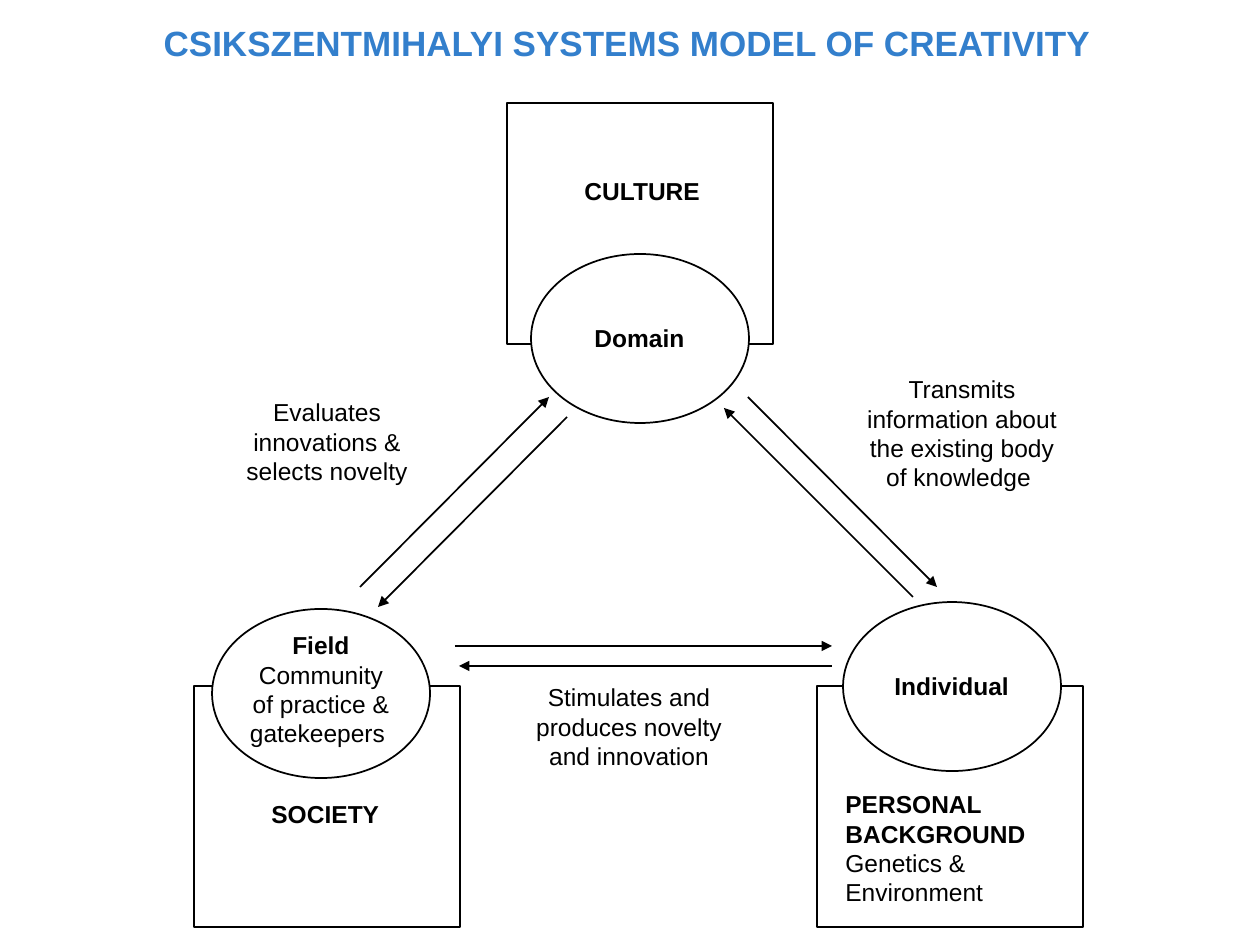
from pptx import Presentation
from pptx.dml.color import RGBColor
from pptx.enum.shapes import MSO_CONNECTOR, MSO_SHAPE
from pptx.enum.text import MSO_ANCHOR, MSO_AUTO_SIZE, PP_ALIGN
from pptx.oxml.ns import qn
from pptx.util import Pt
from lxml.etree import SubElement

SCALE = 914400 / 126
BLACK = RGBColor(0x00, 0x00, 0x00)
WHITE = RGBColor(0xFF, 0xFF, 0xFF)
BLUE = RGBColor(0x33, 0x7F, 0xCC)


def emu(*lengths):
    return [round(length * SCALE) for length in lengths]


def write(text_frame, lines, alignment, font_format):
    """Write (text, bold) lines, one paragraph each."""
    for index, (text, bold) in enumerate(lines):
        paragraph = text_frame.paragraphs[0] if index == 0 else text_frame.add_paragraph()
        paragraph.alignment = alignment
        run = paragraph.add_run()
        run.text = text
        run.font.bold = bold
        run.font.color.rgb = font_format["color"]
        for name in ("name", "size"):
            setattr(run.font, name, font_format[name])


presentation = Presentation()
presentation.slide_width, presentation.slide_height = emu(1260, 945)
slide = presentation.slides.add_slide(presentation.slide_layouts[5])
shapes = slide.shapes

# Title
title = shapes.title
title.left, title.top, title.width, title.height = emu(151, 6, 959, 72)
title_format = {"word_wrap": True, "auto_size": MSO_AUTO_SIZE.NONE,
                "vertical_anchor": MSO_ANCHOR.MIDDLE}
for name, value in title_format.items():
    setattr(title.text_frame, name, value)
write(title.text_frame, [("CSIKSZENTMIHALYI SYSTEMS MODEL OF CREATIVITY", True)],
      PP_ALIGN.LEFT, {"name": "Arial", "size": Pt(20), "color": BLUE})

# Context squares, then the ovals that overlap them
square_places = [(817, 686), (194, 686), (507, 103)]
oval_places = [(212, 609), (843, 602), (531, 254)]
outlines = [(MSO_SHAPE.RECTANGLE, place, (266, 241)) for place in square_places]
outlines += [(MSO_SHAPE.OVAL, place, (218, 169)) for place in oval_places]
for kind, place, size in outlines:
    shape = shapes.add_shape(kind, *emu(*place, *size))
    shape.shadow.inherit = False
    if kind == MSO_SHAPE.OVAL:
        shape.fill.solid()
        shape.fill.fore_color.rgb = WHITE
    else:
        shape.fill.background()
    shape.line.color.rgb = BLACK
    shape.line.width = Pt(1)

# Arrows between field, domain and individual
arrows = [
    (455, 646, 832, 646), (832, 666, 459, 666),
    (748, 397, 937, 587), (913, 597, 724, 408),
    (567, 417, 378, 607), (360, 587, 549, 397),
]
for ends in arrows:
    arrow = shapes.add_connector(MSO_CONNECTOR.STRAIGHT, *emu(*ends))
    arrow.line.color.rgb = BLACK
    arrow.line.width = Pt(1)
    SubElement(arrow.line._get_or_add_ln(), qn("a:tailEnd"), type="triangle")
    SubElement(arrow._element.spPr, qn("a:effectLst"))

# Labels: place and size, wrapping, alignment, lines
LEFT, CENTER = PP_ALIGN.LEFT, PP_ALIGN.CENTER
labels = [
    ((572, 170, 142, 43), False, LEFT, [("CULTURE", True)]),
    ((259, 793, 134, 43), False, LEFT, [("SOCIETY", True)]),
    ((833, 783, 244, 131), True, LEFT,
     [("PERSONAL", True), ("BACKGROUND", True),
      ("Genetics &", False), ("Environment", False)]),
    ((233, 624, 176, 131), True, CENTER,
     [("Field", True), ("Community of practice & gatekeepers ", False)]),
    ((882, 665, 147, 43), False, LEFT, [("Individual", True)]),
    ((582, 317, 116, 43), False, LEFT, [("Domain", True)]),
    ((853, 368, 218, 131), True, CENTER,
     [("Transmits information about the existing body of knowledge ", False)]),
    ((218, 391, 218, 102), True, CENTER,
     [("Evaluates innovations & selects novelty", False)]),
    ((520, 676, 218, 102), True, CENTER,
     [("Stimulates and produces novelty and innovation", False)]),
]
label_font = {"name": "Arial", "size": Pt(14), "color": BLACK}
for box, wraps, alignment, lines in labels:
    text_frame = shapes.add_textbox(*emu(*box)).text_frame
    text_frame.word_wrap = wraps
    text_frame.auto_size = MSO_AUTO_SIZE.SHAPE_TO_FIT_TEXT
    write(text_frame, lines, alignment, label_font)

presentation.save("out.pptx")
